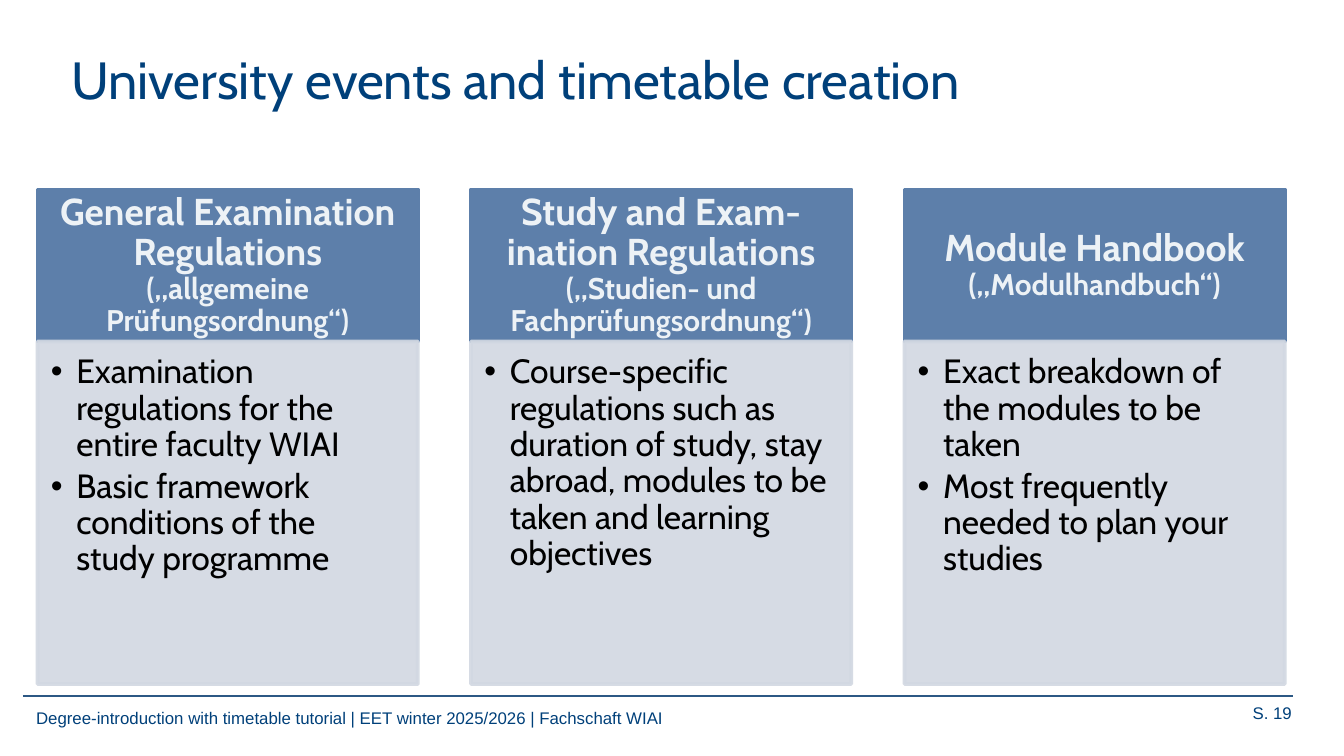
from dataclasses import dataclass

from lxml.etree import SubElement
from pptx import Presentation
from pptx.dml.color import RGBColor
from pptx.enum.shapes import MSO_CONNECTOR, MSO_SHAPE
from pptx.enum.text import MSO_ANCHOR, MSO_AUTO_SIZE, PP_ALIGN
from pptx.oxml.ns import qn
from pptx.util import Inches, Pt


@dataclass(frozen=True)
class Theme:
    heading_font: str = "Cabin"
    footer_font: str = "Arial"
    navy: str = "00407A"
    rule: str = "2C5884"
    header_fill: str = "5D7FAA"
    header_text: str = "EDF2F6"
    body_fill: str = "D2D8E2"
    body_text: str = "000000"
    title_size: int = 28
    header_size: int = 20
    german_size: int = 16
    body_size: int = 18
    footer_size: int = 9


@dataclass(frozen=True)
class Column:
    heading: str
    german: str
    points: tuple[str, ...]


THEME = Theme()
COLUMNS = (
    Column("General Examination Regulations", "(„allgemeine Prüfungsordnung“)",
           ("Examination regulations for the entire faculty WIAI",
            "Basic framework conditions of the study programme")),
    Column("Study and Exam-ination Regulations", "(„Studien- und Fachprüfungsordnung“)",
           ("Course-specific regulations such as duration of study, stay abroad, "
            "modules to be taken and learning objectives",)),
    Column("Module Handbook", "(„Modulhandbuch“)",
           ("Exact breakdown of the modules to be taken",
            "Most frequently needed to plan your studies")),
)
SLIDE_WIDTH = 10
FIRST_LEFT, LAST_LEFT, COLUMN_WIDTH = 0.28, 6.73, 2.83
COLUMN_STEP = (LAST_LEFT - FIRST_LEFT) / (len(COLUMNS) - 1)
HEADER_TOP, HEADER_HEIGHT, BODY_HEIGHT = 1.41, 1.13, 2.55
BULLET_INDENT = 0.19


def add_span(para, text: str, size: int, color: str,
             font: str = THEME.heading_font, bold: bool = False) -> None:
    span = para.add_run()
    span.text = text
    span.font.name = font
    span.font.size = Pt(size)
    span.font.bold = bold
    span.font.color.rgb = RGBColor.from_string(color)


def set_insets(frame, left: float, top: float, right: float, bottom: float) -> None:
    frame.margin_left, frame.margin_top = Inches(left), Inches(top)
    frame.margin_right, frame.margin_bottom = Inches(right), Inches(bottom)


def add_panel(page, left: float, top: float, height: float, color: str):
    panel = page.shapes.add_shape(MSO_SHAPE.RECTANGLE, Inches(left), Inches(top),
                                  Inches(COLUMN_WIDTH), Inches(height))
    panel.shadow.inherit = False
    panel.fill.solid()
    panel.fill.fore_color.rgb = RGBColor.from_string(color)
    panel.line.color.rgb = RGBColor.from_string(color)
    panel.line.width = Pt(2)
    panel.text_frame.word_wrap = True
    return panel


def set_opacity(panel, percent: int) -> None:
    """Apply the same opacity to the fill and the outline."""
    for color in panel._element.spPr.iter(qn("a:srgbClr")):
        SubElement(color, qn("a:alpha")).set("val", str(percent * 1000))


def add_bullet(para) -> None:
    properties = para._p.get_or_add_pPr()
    properties.set("marL", str(Inches(BULLET_INDENT)))
    properties.set("indent", str(-Inches(BULLET_INDENT)))
    SubElement(properties, qn("a:buFont")).set("typeface", "Arial")
    SubElement(properties, qn("a:buChar")).set("char", "•")


def add_header(page, column: Column, left: float) -> None:
    panel = add_panel(page, left, HEADER_TOP, HEADER_HEIGHT, THEME.header_fill)
    frame = panel.text_frame
    frame.vertical_anchor = MSO_ANCHOR.MIDDLE
    set_insets(frame, 0.16, 0.09, 0.16, 0.09)
    para = frame.paragraphs[0]
    para.alignment = PP_ALIGN.CENTER
    para.line_spacing = 0.9
    para.space_after = Pt(7)
    add_span(para, column.heading, THEME.header_size, THEME.header_text, bold=True)
    para.add_line_break()
    add_span(para, column.german, THEME.german_size, THEME.header_text, bold=True)


def add_body(page, column: Column, left: float) -> None:
    panel = add_panel(page, left, HEADER_TOP + HEADER_HEIGHT, BODY_HEIGHT, THEME.body_fill)
    set_opacity(panel, 90)
    frame = panel.text_frame
    frame.vertical_anchor = MSO_ANCHOR.TOP
    set_insets(frame, 0.1, 0.1, 0.14, 0.16)
    for index, point in enumerate(column.points):
        para = frame.add_paragraph() if index else frame.paragraphs[0]
        add_bullet(para)
        para.level = 1
        para.alignment = PP_ALIGN.LEFT
        para.line_spacing = 0.9
        para.space_after = Pt(3)
        add_span(para, point, THEME.body_size, THEME.body_text)


def add_footer_text(page, text: str, left: float, top: float, width: float,
                    height: float, alignment: PP_ALIGN) -> None:
    box = page.shapes.add_textbox(Inches(left), Inches(top), Inches(width), Inches(height))
    box.text_frame.word_wrap = True
    para = box.text_frame.paragraphs[0]
    para.alignment = alignment
    add_span(para, text, THEME.footer_size, THEME.navy, THEME.footer_font)


def add_footer(page) -> None:
    add_footer_text(page, "Degree-introduction with timetable tutorial | "
                    "EET winter 2025/2026 | Fachschaft WIAI",
                    0.17, 5.22, 7.35, 0.19, PP_ALIGN.LEFT)
    rule = page.shapes.add_connector(MSO_CONNECTOR.STRAIGHT, Inches(0.17), Inches(5.18),
                                     Inches(9.62), Inches(5.18))
    rule.line.color.rgb = RGBColor.from_string(THEME.rule)
    rule.line.width = Pt(0.75)
    SubElement(rule._element.spPr, qn("a:effectLst"))
    add_footer_text(page, "S. 19", 8.54, 5.18, 1.17, 0.25, PP_ALIGN.RIGHT)


def set_title(page, text: str) -> None:
    title = page.shapes.title
    title.left, title.top = Inches(0.43), Inches(0.29)
    title.width, title.height = Inches(8.03), Inches(0.94)
    frame = title.text_frame
    frame.auto_size = MSO_AUTO_SIZE.NONE
    frame.vertical_anchor = MSO_ANCHOR.TOP
    set_insets(frame, 0.1, 0.06, 0.1, 0.05)
    para = frame.paragraphs[0]
    para.alignment = PP_ALIGN.LEFT
    add_span(para, text, THEME.title_size, THEME.navy)


def main() -> None:
    deck = Presentation()
    deck.slide_width = Inches(SLIDE_WIDTH)
    deck.slide_height = Inches(SLIDE_WIDTH * 9 / 16)
    page = deck.slides.add_slide(deck.slide_layouts[5])
    add_footer(page)
    set_title(page, "University events and timetable creation")
    for index, column in enumerate(COLUMNS):
        left = FIRST_LEFT + index * COLUMN_STEP
        add_header(page, column, left)
        add_body(page, column, left)
    deck.save("out.pptx")


if __name__ == "__main__":
    main()
